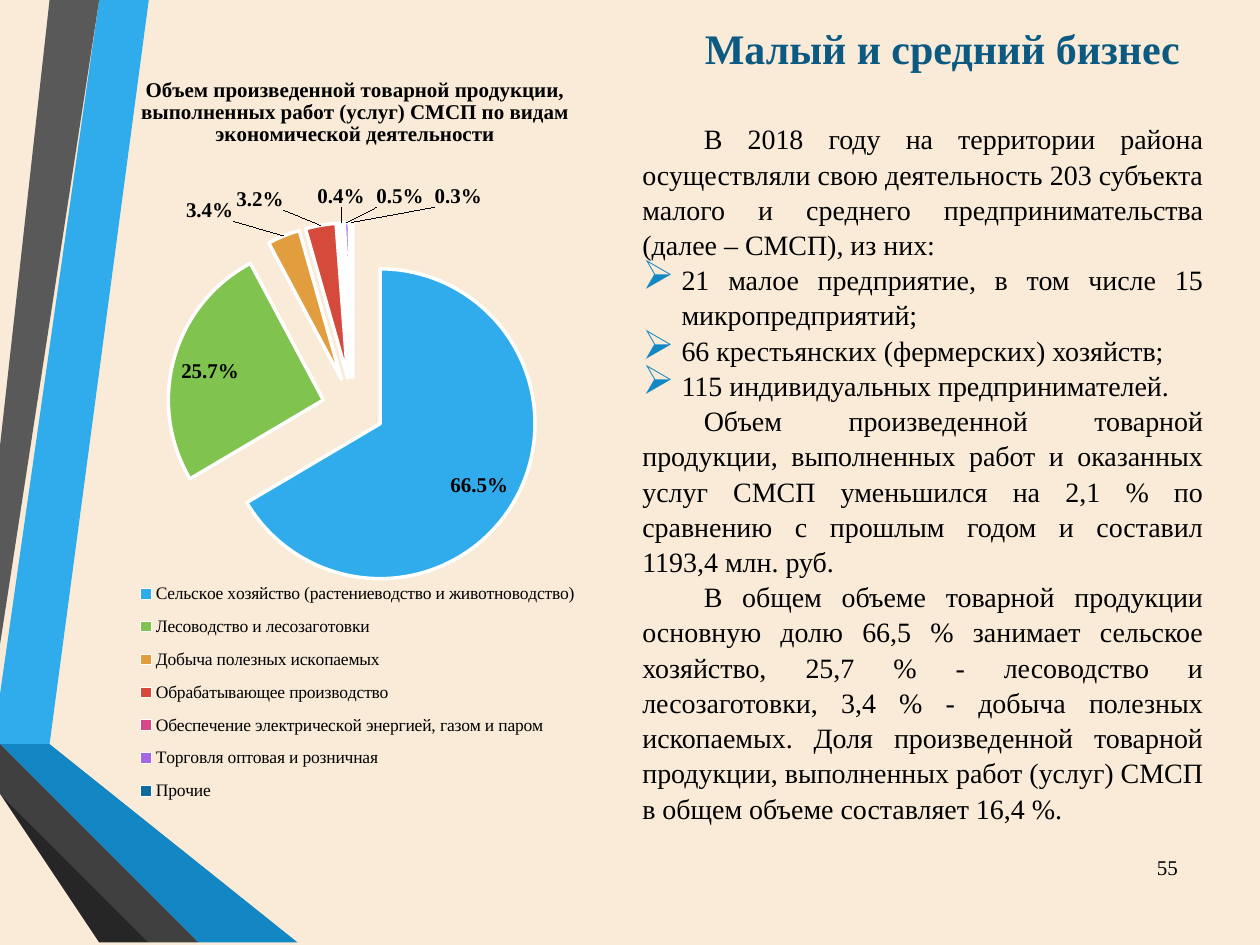
from lxml.etree import SubElement
from pptx import Presentation
from pptx.chart.data import CategoryChartData
from pptx.dml.color import RGBColor
from pptx.enum.chart import XL_CHART_TYPE, XL_LABEL_POSITION, XL_LEGEND_POSITION
from pptx.enum.text import MSO_ANCHOR, PP_ALIGN
from pptx.oxml import parse_xml
from pptx.oxml.ns import nsdecls, qn
from pptx.util import Cm, Pt

THEME = {
    "font": "Times New Roman",
    "paper": "F9EBD8", "ink": "000000", "head": "0C5A82",
    "bullet": "1287C3", "gap": "FFFFFF",
    "title": 24, "body": 16, "label": 12, "legend": 10,
}

TITLE = "Малый и средний бизнес"
PAGE = "55"

# (is a bullet, text)
BODY = [
    (False, "В 2018 году на территории района осуществляли свою деятельность 203 субъекта "
            "малого и среднего предпринимательства (далее – СМСП), из них:"),
    (True, "21 малое предприятие, в том числе 15 микропредприятий;"),
    (True, "66 крестьянских (фермерских) хозяйств;"),
    (True, "115 индивидуальных предпринимателей."),
    (False, "Объем произведенной товарной продукции, выполненных работ и оказанных услуг СМСП "
            "уменьшился на 2,1 % по сравнению с прошлым годом и составил 1193,4 млн. руб."),
    (False, "В общем объеме товарной продукции основную долю 66,5 % занимает сельское хозяйство, "
            "25,7 % - лесоводство и лесозаготовки, 3,4 % - добыча полезных ископаемых. Доля "
            "произведенной товарной продукции, выполненных работ (услуг) СМСП в общем объеме "
            "составляет 16,4 %."),
]

CHART_TITLE = ("Объем произведенной товарной продукции, выполненных работ (услуг) "
               "СМСП по видам экономической деятельности")
# (sector, share, colour, shift of the outer label or None for an inner one)
SECTORS = [
    ("Сельское хозяйство (растениеводство и животноводство)", 0.665, "30ACEC", None),
    ("Лесоводство и лесозаготовки", 0.257, "80C34F", None),
    ("Добыча полезных ископаемых", 0.034, "E29D3E", (-0.08, -0.01)),
    ("Обрабатывающее производство", 0.032, "D64A3B", (-0.06, -0.01)),
    ("Обеспечение электрической энергией, газом и паром", 0.004, "D64787", (0, -0.01)),
    ("Торговля оптовая и розничная", 0.005, "A666E1", (0.09, -0.01)),
    ("Прочие", 0.003, "0E6C9C", (0.18, -0.01)),
]

# Ribbons at the left edge: colour and corners in cm
RIBBONS = [
    ("30ACEC", [(0, 13.82), (0, 14.6), (0.56, 14.7), (2.97, 0), (2.26, 0)]),
    ("595959", [(2.11, 0), (1.4, 0), (0, 8.53), (0, 12.85)]),
    ("262626", [(0, 15.72), (0, 15.77), (2.36, 19.05), (2.51, 19.05)]),
    ("0C5A82", [(0, 14.7), (0, 14.73), (3.96, 19.05), (4.14, 19.05)]),
    ("1287C3", [(0, 14.7), (4.14, 19.05), (5.92, 19.05), (0.56, 14.7), (0, 14.6)]),
    ("404040", [(0, 15.72), (2.51, 19.05), (3.84, 19.05), (0, 14.88)]),
]


def color(name):
    return RGBColor.from_string(THEME.get(name, name))


def style(font, size, ink="ink", bold=False):
    font.name = THEME["font"]
    font.size = Pt(THEME[size])
    font.bold = bold
    font.color.rgb = color(ink)


def add_text(slide, box, lines, align, size, ink="ink", bold=False):
    frame = slide.shapes.add_textbox(*map(Cm, box)).text_frame
    frame.word_wrap = True
    frame.vertical_anchor = MSO_ANCHOR.MIDDLE
    frame.text = "\n".join(lines)
    for par in frame.paragraphs:
        par.alignment = align
        for run in par.runs:
            style(run.font, size, ink, bold)
    return frame


def indent(par, bullet):
    """Hang a bulleted paragraph; indent the first line of a plain one."""
    props = par._p.get_or_add_pPr()
    left, first = (0.79, -0.79) if bullet else (0, 1.24)
    props.set("marL", str(Cm(left)))
    props.set("indent", str(Cm(first)))
    if bullet:
        tint = SubElement(props, qn("a:buClr"))
        SubElement(tint, qn("a:srgbClr"), val=THEME["bullet"])
        SubElement(props, qn("a:buSzPct"), val="145000")
        SubElement(props, qn("a:buChar"), char="➢")
    else:
        SubElement(props, qn("a:buNone"))


def layout(x, y, w=None, h=None, inner=False):
    """Manual chart layout; without a size, x and y suit a title."""
    parts = '<c:layoutTarget val="inner"/>' if inner else ""
    parts += '<c:xMode val="edge"/><c:yMode val="edge"/>'
    for tag, val in zip("xywh", (x, y, w, h)):
        if val is not None:
            parts += f'<c:{tag} val="{val}"/>'
    return parse_xml(f'<c:layout {nsdecls("c")}><c:manualLayout>{parts}'
                     '</c:manualLayout></c:layout>')


def shift(x, y):
    """Layout that moves a data label from its usual place."""
    return parse_xml(f'<c:layout {nsdecls("c")}><c:manualLayout>'
                     f'<c:x val="{x}"/><c:y val="{y}"/></c:manualLayout></c:layout>')


def place(node, new, *after):
    """Put a layout behind the last of the named children, replacing an old one."""
    for old in node.findall(qn("c:layout")):
        node.remove(old)
    spot = max((i + 1 for i, kid in enumerate(node) if kid.tag in map(qn, after)), default=0)
    node.insert(spot, new)


def add_pie(slide):
    data = CategoryChartData(number_format="0.0%")
    data.categories = [row[0] for row in SECTORS]
    data.add_series("Series 1", [row[1] for row in SECTORS])
    box = map(Cm, (1.09, 0.91, 11.99, 15.82))
    chart = slide.shapes.add_chart(XL_CHART_TYPE.PIE, *box, data).chart
    style(chart.font, "legend")

    chart.has_title = True
    frame = chart.chart_title.text_frame
    frame.text = CHART_TITLE
    style(frame.paragraphs[0].runs[0].font, "label", bold=True)
    place(chart.chart_title._element, layout(0.14, 0.035), "c:tx")

    chart.has_legend = True
    legend = chart.legend
    legend.position = XL_LEGEND_POSITION.BOTTOM
    legend.include_in_layout = False
    style(legend.font, "legend")
    place(legend._element, layout(0.11, 0.67, 0.8, 0.31), "c:legendPos", "c:legendEntry")
    area = chart._chartSpace.chart.plotArea
    place(area, layout(0.107, 0.226, 0.792, 0.474, inner=True))

    plot = chart.plots[0]
    plot.vary_by_categories = True
    series = plot.series[0]
    labels = series.data_labels
    labels.number_format = "0.0%"
    labels.number_format_is_linked = False
    labels.show_value = True
    labels.position = XL_LABEL_POSITION.INSIDE_END
    style(labels.font, "label", bold=True)
    leader = labels._element.find(qn("c:showLeaderLines"))
    if leader is None:
        leader = SubElement(labels._element, qn("c:showLeaderLines"))
    leader.set("val", "1")

    for i, (_, _, fill, move) in enumerate(SECTORS):
        point = series.points[i]
        point.format.fill.solid()
        point.format.fill.fore_color.rgb = color(fill)
        point.format.line.color.rgb = color("gap")
        point.format.line.width = Pt(2)
        if move:
            label = point.data_label
            style(label.font, "label", bold=True)
            label.position = XL_LABEL_POSITION.OUTSIDE_END
            node = label._get_or_add_dLbl()
            place(node, shift(*move), "c:idx")
            node.insert(2, parse_xml(f'<c:numFmt {nsdecls("c")} formatCode="0.0%" '
                                     'sourceLinked="0"/>'))
    burst = parse_xml(f'<c:explosion {nsdecls("c")} val="20"/>')
    series._element.find(qn("c:dPt")).addprevious(burst)


def main():
    deck = Presentation()
    deck.slide_width, deck.slide_height = Cm(25.4), Cm(19.05)
    slide = deck.slides.add_slide(deck.slide_layouts[6])
    slide.background.fill.solid()
    slide.background.fill.fore_color.rgb = color("paper")

    for fill, points in RIBBONS:
        pen = slide.shapes.build_freeform(*points[0], scale=Cm(1))
        pen.add_line_segments(points[1:], close=True)
        ribbon = pen.convert_to_shape()
        ribbon.shadow.inherit = False
        ribbon.fill.solid()
        ribbon.fill.fore_color.rgb = color(fill)
        ribbon.line.fill.background()

    add_text(slide, (12.7, 0, 12.6, 1.93), [TITLE], PP_ALIGN.CENTER, "title", "head", True)
    body = add_text(slide, (12.7, 1.93, 11.81, 15.19), [text for _, text in BODY],
                    PP_ALIGN.JUSTIFY, "body")
    for par, (bullet, _) in zip(body.paragraphs, BODY):
        par.line_spacing = 1.05
        indent(par, bullet)
    add_text(slide, (22.94, 16.97, 1.19, 1.02), [PAGE], PP_ALIGN.CENTER, "label")
    add_pie(slide)
    deck.save("out.pptx")


if __name__ == "__main__":
    main()
